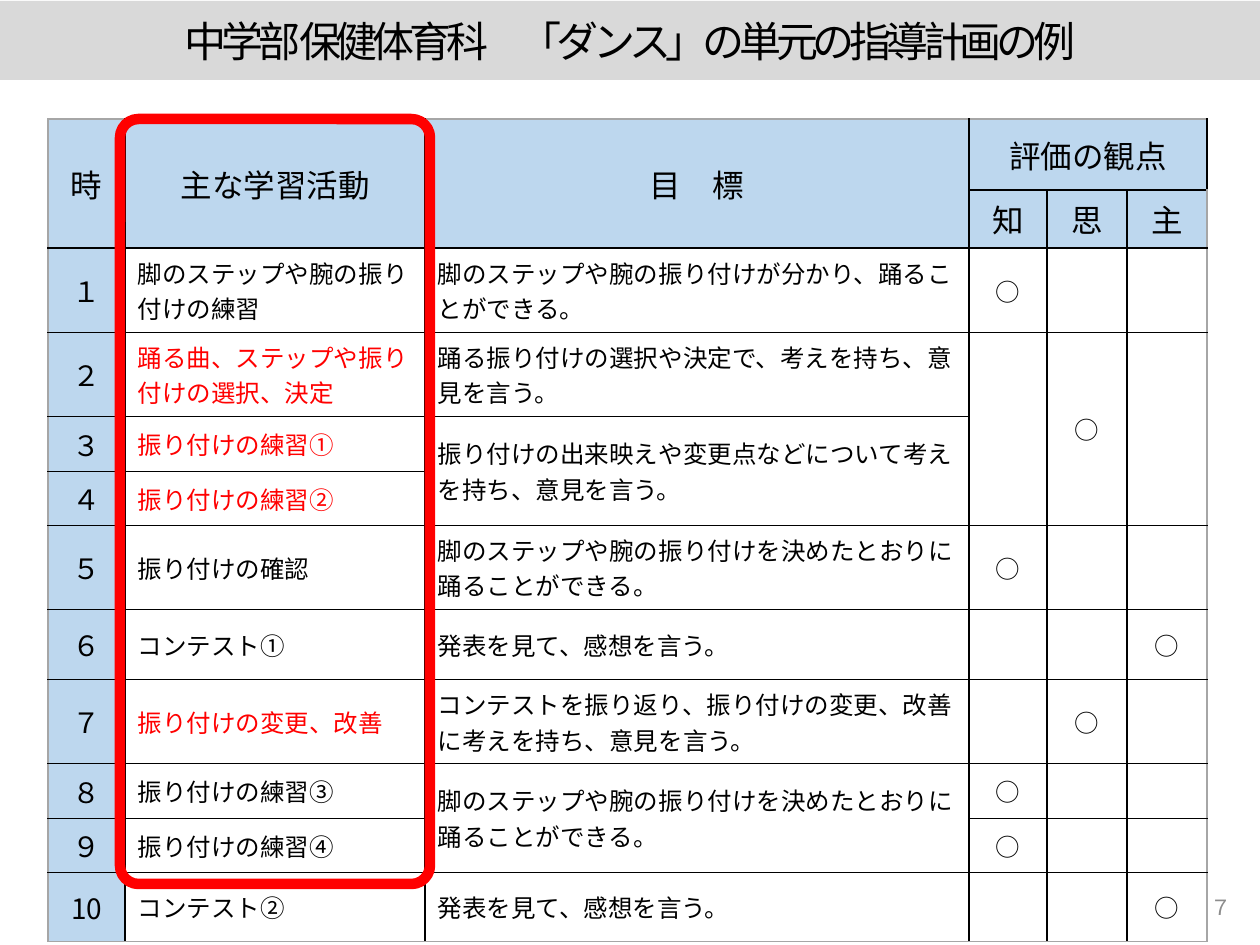
from lxml import etree
from pptx import Presentation
from pptx import util as u
from pptx.dml.color import RGBColor
from pptx.enum import shapes, text
from pptx.oxml.ns import qn

PX = u.Inches(1) // 126
FONT = "Noto Sans CJK JP"
COLORS = {"bar": "D9D9D9", "head": "BDD7EE", "ink": "000000", "accent": "FF0000",
          "edge": "A6A6A6", "page": "8C8C8C"}
CENTER, LEFT, RIGHT = text.PP_ALIGN.CENTER, text.PP_ALIGN.LEFT, text.PP_ALIGN.RIGHT

COLUMN_WIDTHS = [77, 300, 544, 78, 80, 80]
ROW_HEIGHTS = [71, 58, 84, 84, 55, 54, 84, 70, 84, 55, 54, 69]
HEADINGS = [["時", "主な学習活動", "目　標", "評価の観点", "", ""],
            ["", "", "", "知", "思", "主"]]
DECIDED = "脚のステップや腕の振り付けを決めたとおりに踊ることができる。"
WATCHED = "発表を見て、感想を言う。"
LESSONS = [
    ["１", "脚のステップや腕の振り付けの練習",
     "脚のステップや腕の振り付けが分かり、踊ることができる。", "○", "", ""],
    ["２", "踊る曲、ステップや振り付けの選択、決定",
     "踊る振り付けの選択や決定で、考えを持ち、意見を言う。", "", "○", ""],
    ["３", "振り付けの練習①",
     "振り付けの出来映えや変更点などについて考えを持ち、意見を言う。", "", "", ""],
    ["４", "振り付けの練習②", "", "", "", ""],
    ["５", "振り付けの確認", DECIDED, "○", "", ""],
    ["６", "コンテスト①", WATCHED, "", "", "○"],
    ["７", "振り付けの変更、改善",
     "コンテストを振り返り、振り付けの変更、改善に考えを持ち、意見を言う。", "", "○", ""],
    ["８", "振り付けの練習③", DECIDED, "○", "", ""],
    ["９", "振り付けの練習④", "", "○", "", ""],
    ["10", "コンテスト②", WATCHED, "", "", "○"],
]
HIGHLIGHTED_HOURS = {"２", "３", "４", "７"}
# first row, first column, last row, last column
MERGES = [(0, 0, 1, 0), (0, 1, 1, 1), (0, 2, 1, 2), (0, 3, 0, 5), (3, 3, 5, 3),
          (3, 4, 5, 4), (3, 5, 5, 5), (4, 2, 5, 2), (9, 2, 10, 2)]


def px(*lengths):
    return [length * PX for length in lengths]


def rgb(name):
    return RGBColor.from_string(COLORS[name])


def write(frame, words, size, color="ink", align=CENTER):
    paragraph = frame.paragraphs[0]
    paragraph.alignment = align
    run = paragraph.add_run()
    run.text = words
    for name, value in {"size": u.Pt(size), "name": FONT, "bold": False}.items():
        setattr(run.font, name, value)
    run.font.color.rgb = rgb(color)
    etree.SubElement(run.font._element, qn("a:ea"), typeface=FONT)
    return run


def add_title(slide):
    title = slide.shapes.title
    title.left, title.top, title.width, title.height = px(0, 1, 1260, 79)
    title.fill.solid()
    title.fill.fore_color.rgb = rgb("bar")
    title.text_frame.vertical_anchor = text.MSO_ANCHOR.MIDDLE
    run = write(title.text_frame, "中学部 保健体育科　「ダンス」の単元の指導計画の例", 24)
    run.font._element.set("spc", "-300")


def set_borders(cell, row, column):
    """Draw black inner rules and a grey outer edge."""
    outer = {"L": column == 0, "R": column == len(COLUMN_WIDTHS) - 1,
             "T": row == 0, "B": row == len(ROW_HEIGHTS) - 1}
    properties = cell._tc.get_or_add_tcPr()
    for index, (side, is_outer) in enumerate(outer.items()):
        line = etree.Element(qn(f"a:ln{side}"), w=str(u.Pt(1)))
        fill = etree.SubElement(line, qn("a:solidFill"))
        etree.SubElement(fill, qn("a:srgbClr"), val=COLORS["edge" if is_outer else "ink"])
        properties.insert(index, line)


def fill_cell(cell, words, row, column):
    is_heading = row < len(HEADINGS)
    cell.vertical_anchor = text.MSO_ANCHOR.MIDDLE
    if column == 0:
        cell.margin_left = cell.margin_right = 0
    if is_heading or column == 0:
        cell.fill.solid()
        cell.fill.fore_color.rgb = rgb("head")
    else:
        cell.fill.background()
    set_borders(cell, row, column)
    size = 18 if is_heading else 16 if column == 0 else 14
    if not words:
        # An empty cell's text size also limits the row height.
        end = cell.text_frame.paragraphs[0]._p.get_or_add_endParaRPr()
        end.set("sz", str(size * 100))
        return
    align = LEFT if not is_heading and column in (1, 2) else CENTER
    highlighted = (not is_heading and column == 1
                   and LESSONS[row - len(HEADINGS)][0] in HIGHLIGHTED_HOURS)
    write(cell.text_frame, words, size, "accent" if highlighted else "ink", align)


def add_plan(slide):
    plan = slide.shapes.add_table(
        len(ROW_HEIGHTS), len(COLUMN_WIDTHS),
        *px(48, 119, sum(COLUMN_WIDTHS), sum(ROW_HEIGHTS))).table
    plan.first_row = plan.horz_banding = False
    for column, width in zip(plan.columns, COLUMN_WIDTHS):
        column.width = width * PX
    for row, height in zip(plan.rows, ROW_HEIGHTS):
        row.height = height * PX
    for row, entries in enumerate(HEADINGS + LESSONS):
        for column, words in enumerate(entries):
            fill_cell(plan.cell(row, column), words, row, column)
    for top, left, bottom, right in MERGES:
        plan.cell(top, left).merge(plan.cell(bottom, right))


def add_activity_frame(slide):
    frame = slide.shapes.add_shape(shapes.MSO_SHAPE.ROUNDED_RECTANGLE,
                                   *px(120, 119, 310, 765))
    frame.adjustments[0] = 0.06
    frame.shadow.inherit = False
    frame.fill.background()
    frame.line.color.rgb = rgb("accent")
    frame.line.width = u.Pt(6)


def add_page_number(slide):
    frame = slide.shapes.add_textbox(*px(960, 882, 284, 50)).text_frame
    frame.word_wrap = True
    frame.vertical_anchor = text.MSO_ANCHOR.MIDDLE
    write(frame, "７", 12, "page", RIGHT)


def main():
    deck = Presentation()
    deck.slide_width, deck.slide_height = px(1260, 945)
    slide = deck.slides.add_slide(deck.slide_layouts[5])
    add_title(slide)
    add_plan(slide)
    add_activity_frame(slide)
    add_page_number(slide)
    deck.save("out.pptx")


if __name__ == "__main__":
    main()
